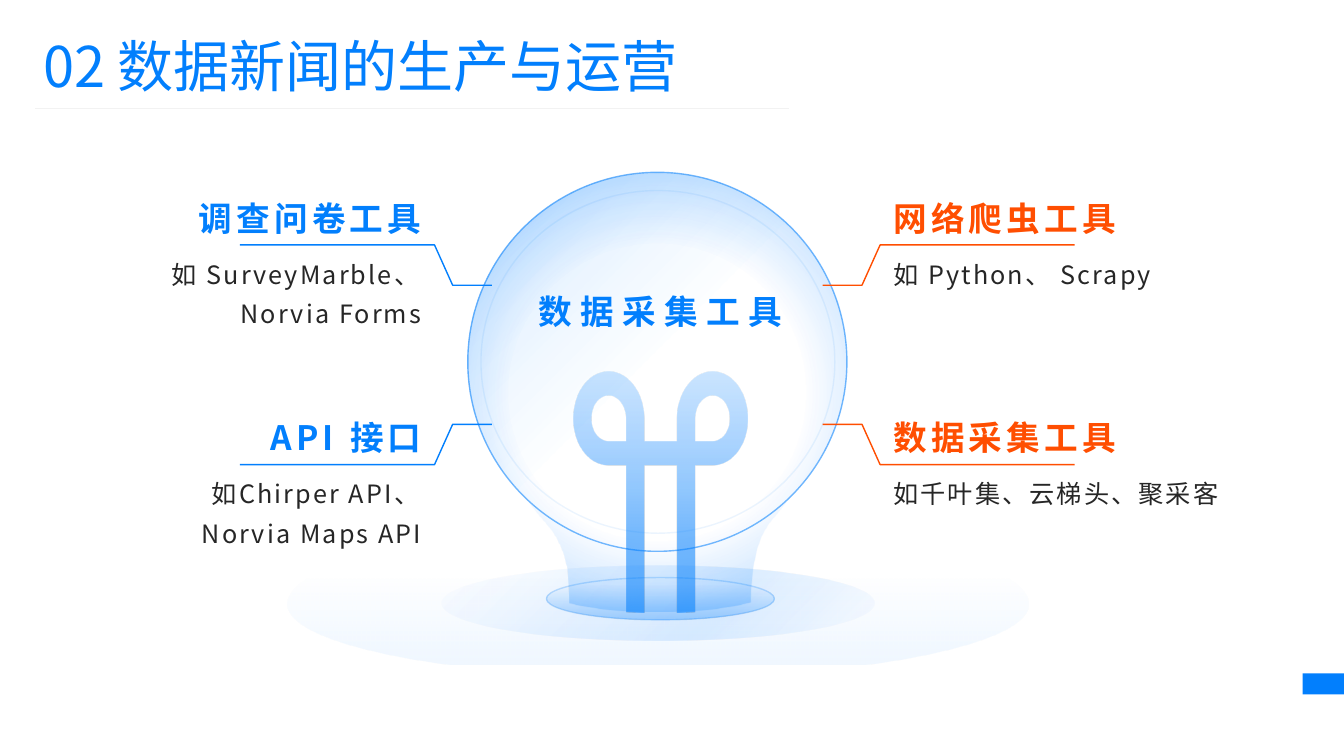
from dataclasses import dataclass

from lxml import etree
from pptx import Presentation
from pptx.dml.color import RGBColor
from pptx.enum.shapes import MSO_CONNECTOR, MSO_SHAPE
from pptx.enum.text import MSO_ANCHOR, PP_ALIGN
from pptx.oxml.ns import qn
from pptx.util import Inches, Pt

LEFT, CENTER, RIGHT = PP_ALIGN.LEFT, PP_ALIGN.CENTER, PP_ALIGN.RIGHT
TOP, MIDDLE, BOTTOM = MSO_ANCHOR.TOP, MSO_ANCHOR.MIDDLE, MSO_ANCHOR.BOTTOM
OVAL, RECTANGLE = MSO_SHAPE.OVAL, MSO_SHAPE.RECTANGLE
FONT = "Noto Sans CJK SC"
BLUE, PALE_BLUE, ORANGE, INK = "027FFD", "67B2FE", "FF4E01", "262626"
BULB_AXIS, FILAMENT_AXIS = 6.52, 6.55
BULB = (4.64, 1.71, 3.76, 3.76)


@dataclass
class Gradient:
    stops: list  # (position %, colour, opacity %)
    focus: tuple | None = None  # left, top, right, bottom %; None is vertical


@dataclass
class Callout:
    heading: str
    body: str
    on_left: bool
    rule_y: float
    arm_y: float
    body_width: float


CALLOUTS = [
    Callout("调查问卷工具", "如 SurveyMarble、 Norvia Forms", True, 2.43, 2.83, 3.26),
    Callout("API 接口", "如Chirper API、Norvia Maps API", True, 4.61, 4.21, 2.71),
    Callout("网络爬虫工具", "如 Python、 Scrapy", False, 2.43, 2.83, 2.86),
    Callout("数据采集工具", "如千叶集、云梯头、聚采客", False, 4.61, 4.21, 3.64),
]

# Outlines: two numbers are a corner, six are a cubic curve
WIDE_FLOOR = [(6.51, 5.23), (8.83, 5.24, 10.2, 5.59, 10.2, 5.99),
              (10.2, 6.24, 9.55, 6.46, 8.58, 6.59), (4.47, 6.59),
              (3.49, 6.46, 2.85, 6.24, 2.85, 5.99),
              (2.85, 5.6, 4.14, 5.23, 6.51, 5.23)]
GLASS = [(6.52, 1.71), (7.56, 1.71, 8.4, 2.55, 8.4, 3.59),
         (8.4, 4.11, 8.19, 4.58, 7.82, 4.95),
         (7.77, 5.02, 7.72, 5.08, 7.67, 5.14),
         (7.58, 5.24, 7.52, 5.38, 7.49, 5.53),
         (7.46, 5.67, 7.45, 5.82, 7.45, 5.97),
         (7.18, 6.04, 6.86, 6.07, 6.52, 6.07),
         (6.2, 6.07, 5.91, 6.04, 5.65, 5.98),
         (5.65, 5.87, 5.64, 5.76, 5.63, 5.64),
         (5.6, 5.47, 5.53, 5.31, 5.42, 5.19),
         (5.36, 5.12, 5.3, 5.05, 5.22, 4.94),
         (4.85, 4.58, 4.64, 4.11, 4.64, 3.59),
         (4.64, 2.55, 5.48, 1.71, 6.52, 1.71)]
HALF_FILAMENT = [(6.39, 4.38), (6.39, 4.16),
                 (6.39, 3.9, 6.23, 3.69, 6.04, 3.69),
                 (5.84, 3.69, 5.69, 3.9, 5.69, 4.16),
                 (5.69, 4.41, 5.84, 4.62, 6.04, 4.62),
                 (6.21, 4.62), (6.21, 6.07), (6.39, 6.08), (6.39, 4.62)]
LOOP_HOLE = [(6.04, 3.93), (5.94, 3.93, 5.87, 4.03, 5.87, 4.16),
             (5.87, 4.28, 5.94, 4.38, 6.04, 4.38), (6.21, 4.38), (6.21, 4.16),
             (6.21, 4.03, 6.13, 3.93, 6.04, 3.93)]


def color(value: str) -> RGBColor:
    return RGBColor.from_string(value)


def pairs(numbers: tuple) -> list:
    return list(zip(numbers[::2], numbers[1::2]))


def mirror(outline: list, axis: float) -> list:
    """Reflect an outline and run it backwards."""
    backwards = [outline[-1][-2:]]
    for before, part in reversed(list(zip(outline, outline[1:]))):
        backwards.append(sum(reversed(pairs(before[-2:] + part[:-2])), ()))
    return [sum(((2 * axis - x, y) for x, y in pairs(part)), ()) for part in backwards]


def paint(shape, fill: str | Gradient | None = None, line: str | None = None,
          opacity: int = 100) -> None:
    shape.shadow.inherit = False
    if isinstance(fill, str):
        shape.fill.solid()
        shape.fill.fore_color.rgb = color(fill)
    else:
        shape.fill.background()
    properties = shape._element.spPr
    if isinstance(fill, Gradient):
        gradient = etree.Element(qn("a:gradFill"), rotWithShape="1")
        stop_list = etree.SubElement(gradient, qn("a:gsLst"))
        for position, value, alpha in fill.stops:
            stop = etree.SubElement(stop_list, qn("a:gs"), pos=str(position * 1000))
            tint = etree.SubElement(stop, qn("a:srgbClr"), val=value)
            etree.SubElement(tint, qn("a:alpha"), val=str(alpha * 1000))
        if fill.focus:
            shade = etree.SubElement(gradient, qn("a:path"), path="circle")
            etree.SubElement(shade, qn("a:fillToRect"),
                             {side: str(part * 1000) for side, part in zip("ltrb", fill.focus)})
        else:
            etree.SubElement(gradient, qn("a:lin"), ang="5400000", scaled="0")
        properties.replace(properties.find(qn("a:noFill")), gradient)
    if line is None:
        shape.line.fill.background()
        return
    shape.line.color.rgb = color(line)
    shape.line.width = Pt(1)
    if opacity < 100:
        tint = properties.find(qn("a:ln")).find(".//" + qn("a:srgbClr"))
        etree.SubElement(tint, qn("a:alpha"), val=str(opacity * 1000))


def add_preset(page, kind, bounds: tuple, **look) -> None:
    paint(page.shapes.add_shape(kind, *map(Inches, bounds)), **look)


def add_outline(page, contours: list, closed: bool = True, **look) -> None:
    builder = None
    for outline in contours:
        ends = [tuple(map(Inches, part[-2:])) for part in outline]
        if builder is None:
            builder = page.shapes.build_freeform(*ends[0])
        else:
            builder.move_to(*ends[0])
        builder.add_line_segments(ends[1:], close=False)
    shape = builder.convert_to_shape()

    # Bend the segments that are curves, then close each contour
    geometry = shape._element.spPr.find(qn("a:custGeom"))
    segments = list(geometry.iter(qn("a:lnTo")))
    for outline in contours:
        for part in outline[1:]:
            segment = segments.pop(0)
            if len(part) == 6:
                curve = etree.Element(qn("a:cubicBezTo"))
                for x, y in pairs(part):
                    etree.SubElement(curve, qn("a:pt"), x=str(Inches(x) - shape.left),
                                     y=str(Inches(y) - shape.top))
                segment.getparent().replace(segment, curve)
                segment = curve
        if closed:
            segment.addnext(etree.Element(qn("a:close")))
    paint(shape, **look)


def add_text(page, text: str, bounds: tuple, size: int, value: str, align=LEFT,
             anchor=TOP, bold: bool = False, tracking: float = 0,
             leading: float = 1.0, margin: float = 0) -> None:
    frame = page.shapes.add_textbox(*map(Inches, bounds)).text_frame
    frame.word_wrap = True
    frame.vertical_anchor = anchor
    frame.margin_left = frame.margin_right = Inches(margin)
    frame.margin_top = frame.margin_bottom = Inches(margin / 2)
    para = frame.paragraphs[0]
    para.text = text
    para.alignment = align
    para.line_spacing = leading
    font = para.font
    font.size, font.bold, font.name = Pt(size), bold, FONT
    font.color.rgb = color(value)
    defaults = para._p.pPr.find(qn("a:defRPr"))
    defaults.set("spc", str(int(tracking * 100)))
    etree.SubElement(defaults, qn("a:ea"), typeface=FONT)


def add_callout(page, callout: Callout) -> None:
    tone = BLUE if callout.on_left else ORANGE
    align = RIGHT if callout.on_left else LEFT
    for text, top, width, height, style in (
        (callout.body, callout.rule_y + 0.05, callout.body_width, 0.95,
         dict(size=18, value=INK, tracking=1.5, leading=1.3)),
        (callout.heading, callout.rule_y - 0.4, 2.45, 0.33,
         dict(size=24, value=tone, tracking=3, bold=True, anchor=BOTTOM)),
    ):
        left = 4.18 - width if callout.on_left else 8.86
        add_text(page, text, (left, top, width, height), align=align, **style)
    leader = [(4.88, callout.arm_y), (4.49, callout.arm_y),
              (4.31, callout.rule_y), (2.38, callout.rule_y)]
    if not callout.on_left:
        leader = mirror(leader, BULB_AXIS)
    add_outline(page, [leader], closed=False, line=tone)


def main() -> None:
    deck = Presentation()
    deck.slide_width, deck.slide_height = Inches(13.33), Inches(7.5)
    page = deck.slides.add_slide(deck.slide_layouts[6])

    # Page marker and title
    add_preset(page, RECTANGLE, (12.92, 6.68, 0.42, 0.21), fill=BLUE)
    add_text(page, "02 数据新闻的生产与运营", (0.33, 0.26, 7.68, 0.77), 40, BLUE, margin=0.1)
    rule = page.shapes.add_connector(MSO_CONNECTOR.STRAIGHT, Inches(0.35), Inches(1.08),
                                     Inches(7.83), Inches(1.08))
    rule.line.color.rgb = color("F2F2F2")
    rule.line.width = Pt(0.5)
    etree.SubElement(rule._element.spPr, qn("a:effectLst"))

    # Floor, glass and socket
    add_preset(page, OVAL, (4.38, 5.61, 4.29, 0.74), fill=Gradient(
        [(0, BLUE, 0), (37, BLUE, 13), (100, BLUE, 0)], (100, 100, 0, 0)))
    add_outline(page, [WIDE_FLOOR],
                fill=Gradient([(36, PALE_BLUE, 0), (100, PALE_BLUE, 10)]))
    add_outline(page, [GLASS], fill=Gradient(
        [(0, BLUE, 0), (51, BLUE, 0), (100, BLUE, 38)], (50, 50, 50, 50)))
    add_preset(page, OVAL, (5.42, 5.73, 2.26, 0.42), line=BLUE, opacity=22,
               fill=Gradient([(18, BLUE, 0), (100, BLUE, 32)]))

    # Filament and rings
    add_outline(page, [HALF_FILAMENT + mirror(HALF_FILAMENT, FILAMENT_AXIS),
                       LOOP_HOLE, mirror(LOOP_HOLE, FILAMENT_AXIS)],
                fill=Gradient([(0, PALE_BLUE, 34), (69, BLUE, 55)]))
    add_preset(page, OVAL, BULB, line=BLUE, opacity=55)
    add_preset(page, OVAL, (4.77, 1.89, 3.51, 3.4), line=BLUE, opacity=8)
    add_preset(page, OVAL, BULB, fill=Gradient(
        [(0, BLUE, 0), (51, "0282FA", 0), (100, BLUE, 17)], (100, 100, 0, 0)))

    # Callouts and centre label
    for callout in CALLOUTS:
        add_callout(page, callout)
    add_text(page, "数据采集工具", (4.91, 2.77, 3.28, 0.63), 24, BLUE, CENTER, MIDDLE,
             bold=True, tracking=6)
    deck.save("out.pptx")


if __name__ == "__main__":
    main()
